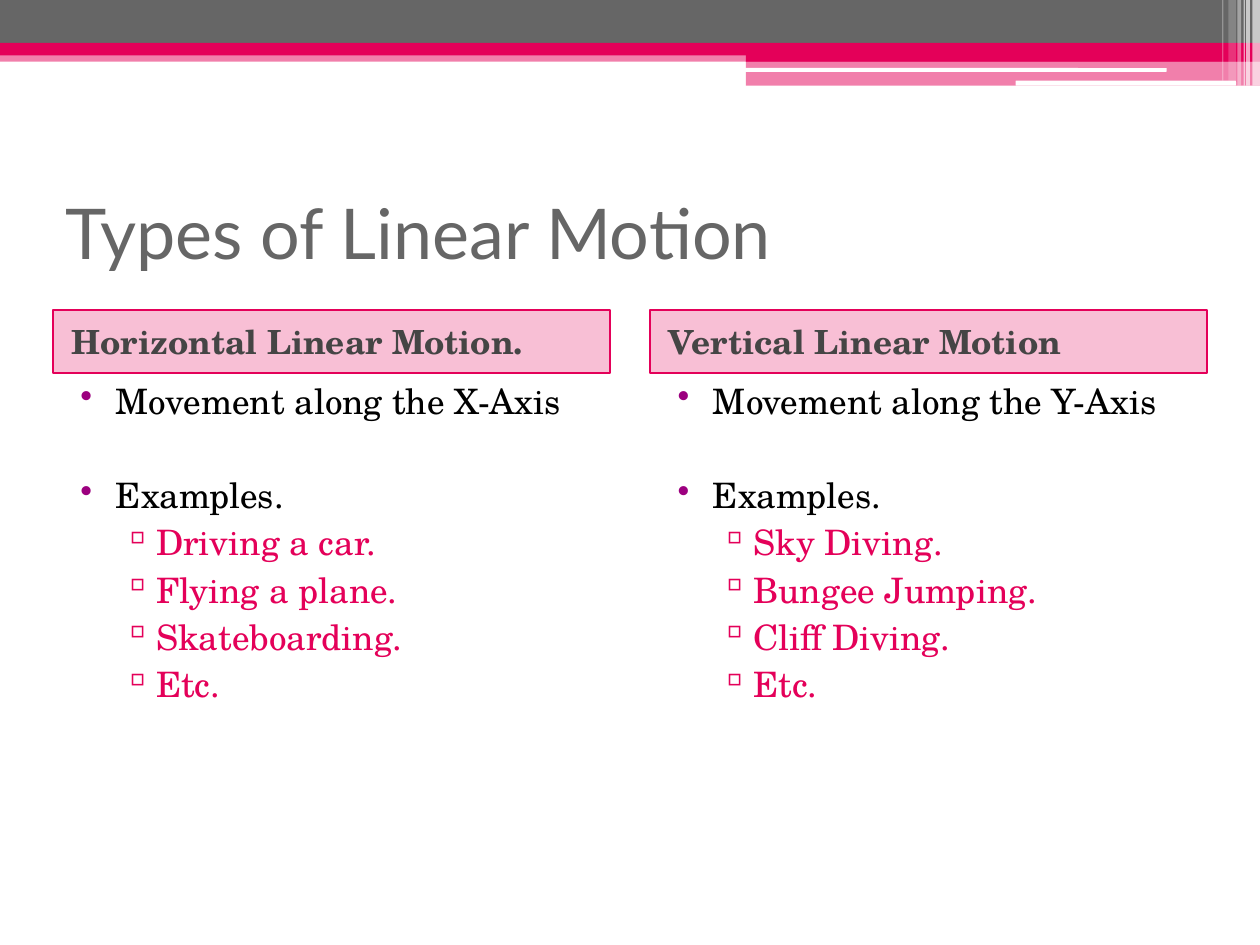
import pptx
import pptx.util
import pptx.dml.color
import pptx.enum.shapes
import pptx.enum.text
import pptx.oxml.ns
import lxml.etree

Inches = pptx.util.Inches
Pt = pptx.util.Pt
RGB = pptx.dml.color.RGBColor
Kind = pptx.enum.shapes.MSO_SHAPE
Anchor = pptx.enum.text.MSO_ANCHOR
qn = pptx.oxml.ns.qn

PINK = RGB(0xE4, 0x00, 0x59)
GRAY = RGB(0x66, 0x66, 0x66)
DARK = RGB(0x45, 0x45, 0x45)
PLUM = RGB(0x9C, 0x00, 0x7F)
BLACK = RGB(0, 0, 0)
WHITE = RGB(0xFF, 0xFF, 0xFF)
SANS = "Lato"
SERIF = "TeX Gyre Schola"


def add_bar(slide, box, color, alpha=100, kind=Kind.RECTANGLE):
    """Add a filled shape without outline, with the given opacity in percent."""
    bar = slide.shapes.add_shape(kind, *map(Inches, box))
    bar.shadow.inherit = False
    bar.fill.solid()
    bar.fill.fore_color.rgb = color
    bar.line.fill.background()
    if alpha < 100:
        tint = next(bar._element.spPr.iter(qn("a:srgbClr")))
        lxml.etree.SubElement(tint, qn("a:alpha"), val=str(alpha * 1000))
    return bar


def set_font(para, name, size, color, bold=False):
    """Set the font of a whole paragraph."""
    font = para.font
    font.name, font.size, font.bold = name, Pt(size), bold
    font.color.rgb = color


def set_indent(para, left, hang=0):
    """Set the left margin and first-line indent of a paragraph."""
    props = para._p.get_or_add_pPr()
    props.set("marL", str(Inches(left)))
    props.set("indent", str(Inches(hang)))
    return props


def set_bullet(para, left, hang, char, color):
    """Give a paragraph a hanging bullet."""
    props = set_indent(para, left, hang)
    tint = lxml.etree.SubElement(props, qn("a:buClr"))
    lxml.etree.SubElement(tint, qn("a:srgbClr"), val=str(color))
    lxml.etree.SubElement(props, qn("a:buChar"), char=char)


def add_text(slide, box):
    """Add a wrapping text box and return its frame."""
    frame = slide.shapes.add_textbox(*map(Inches, box)).text_frame
    frame.word_wrap = True
    return frame


def add_band(slide, box):
    """Draw the layered band along the top edge."""
    left, top, width, height = box
    right = left + width
    mid = left + 5.92
    half = right - mid
    add_bar(slide, (left, top + 0.4, width, 0.09), PINK, 50)
    add_bar(slide, (left, top, width, 0.34), GRAY)
    add_bar(slide, (left, top + 0.34, width, 0.1), PINK)
    add_bar(slide, (mid, top + 0.39, half, 0.1), PINK)
    add_bar(slide, (mid, top + 0.48, half, 0.2), PINK, 50)
    for x, y, w, h in ((5.91, 0.54, 3.35, 0.03), (8.06, 0.64, 1.75, 0.04)):
        place = (left + x, top + y, w, h)
        add_bar(slide, place, WHITE, kind=Kind.ROUNDED_RECTANGLE)
    stripes = (
        (0.06, 0.06, height, 65),
        (0.11, 0.03, height, 65),
        (0.13, 0.01, height, 60),
        (0.18, 0.03, height, 40),
        (0.25, 0.06, height - 0.04, 20),
        (0.3, 0.01, height - 0.04, 30),
    )
    for back, w, h, alpha in stripes:
        add_bar(slide, (right - back, top, w, h), WHITE, alpha)


def add_title(slide, box, text):
    """Add the slide title."""
    frame = add_text(slide, box)
    frame.vertical_anchor = Anchor.MIDDLE
    para = frame.paragraphs[0]
    para.text = text
    set_font(para, SANS, 40, GRAY)


def add_head(slide, box, text):
    """Add the tinted heading of a column."""
    head = add_bar(slide, box, PINK, 25)
    head.line.color.rgb = PINK
    head.line.width = Pt(1)
    frame = head.text_frame
    frame.vertical_anchor = Anchor.MIDDLE
    para = frame.paragraphs[0]
    para.text = text
    para.alignment = pptx.enum.text.PP_ALIGN.LEFT
    para.space_before = Pt(3)
    set_indent(para, 0.05)
    set_font(para, SERIF, 19, DARK, True)


def add_column(slide, box, head, motion, items):
    """Add a heading with its motion and examples below."""
    left, top, width, height = box
    add_head(slide, (left, top, width, 0.5), head)
    frame = add_text(slide, (left, top + 0.5, width, height - 0.5))
    main = (0.4, -0.28, "•", PLUM)
    sub = (0.72, -0.27, "▫", PINK)
    rows = [(motion, 3, 0, main, BLACK), ("Examples.", 30, 0, main, BLACK)]
    rows += [(item, 3, 1, sub, PINK) for item in items]
    for num, (text, gap, level, bullet, color) in enumerate(rows):
        para = frame.add_paragraph() if num else frame.paragraphs[0]
        para.text = text
        para.level = level
        para.space_before = Pt(gap)
        set_bullet(para, *bullet)
        set_font(para, SERIF, 20, color)


def main():
    """Build and save the slide."""
    deck = pptx.Presentation()
    deck.slide_width, deck.slide_height = Inches(10), Inches(7.5)
    slide = deck.slides.add_slide(deck.slide_layouts[6])
    add_band(slide, (0, 0, 10, 0.68))
    add_title(slide, (0.42, 1.25, 9.17, 1.17), "Types of Linear Motion")
    columns = (
        ("Horizontal Linear Motion.", "Movement along the X-Axis",
         ("Driving a car.", "Flying a plane.", "Skateboarding.", "Etc.")),
        ("Vertical Linear Motion", "Movement along the Y-Axis",
         ("Sky Diving.", "Bungee Jumping.", "Cliff Diving.", "Etc.")),
    )
    for num, column in enumerate(columns):
        add_column(slide, (0.42 + 4.74 * num, 2.46, 4.42, 4.75), *column)
    deck.save("out.pptx")


if __name__ == "__main__":
    main()
